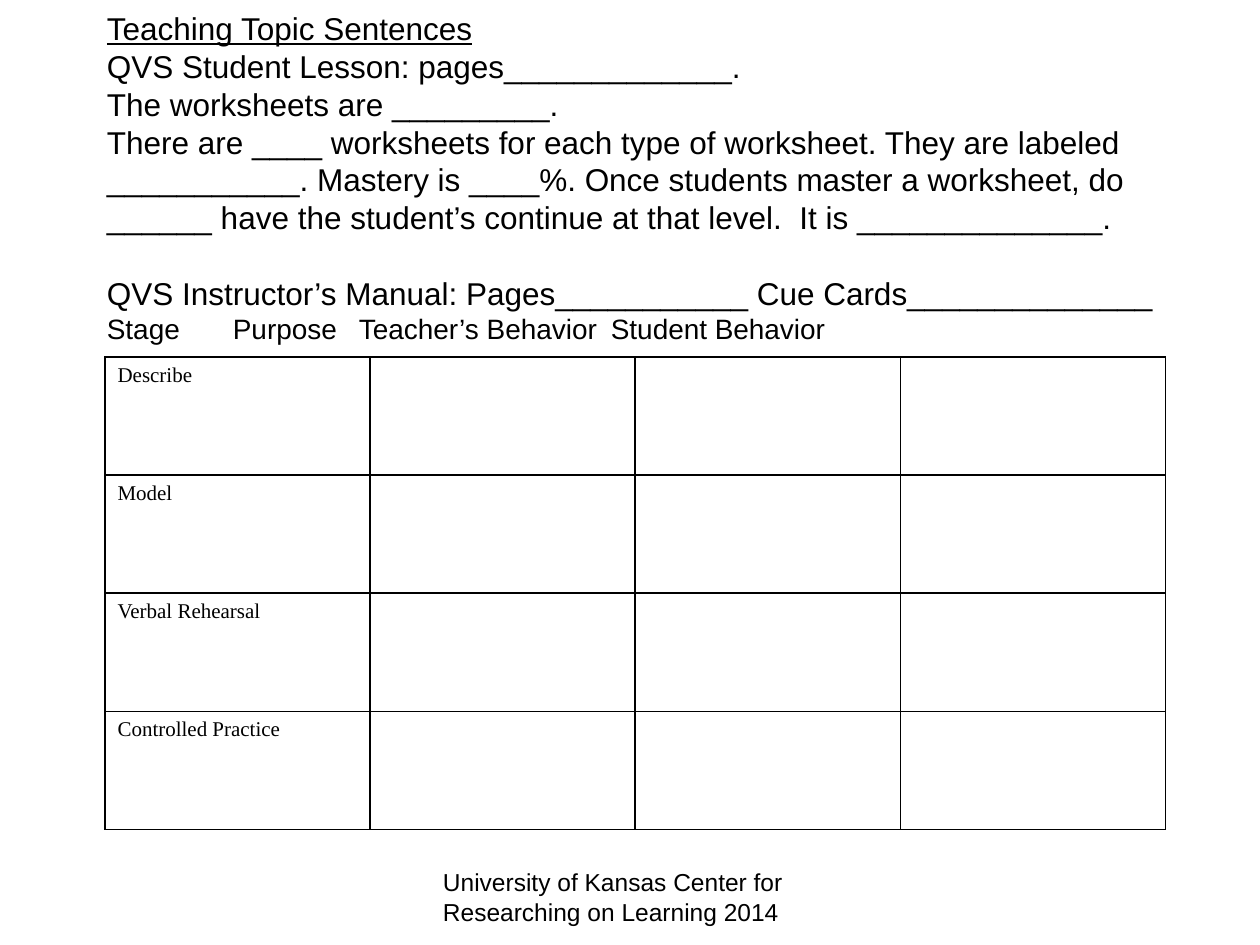
from dataclasses import dataclass

from lxml.etree import SubElement
from pptx import Presentation
from pptx.dml.color import RGBColor
from pptx.enum.text import MSO_ANCHOR as Anchor
from pptx.oxml.ns import qn
from pptx.util import Pt


@dataclass(frozen=True)
class Theme:
    """Colours, fonts and type sizes of the slide."""
    ink: RGBColor = RGBColor(0, 0, 0)
    sans: str = "Arial"
    serif: str = "Times New Roman"
    body: float = 18
    heading: float = 16
    footer: float = 14
    label: float = 12
    leading: float = 1.2
    border: float = 1


THEME = Theme()
LESSON = [
    "QVS Student Lesson: pages_____________.",
    "The worksheets are _________.",
    "There are ____ worksheets for each type of worksheet. They are labeled",
    "___________. Mastery is ____%. Once students master a worksheet, do",
    "______ have the student’s continue at that level.  It is ______________.",
]
MANUAL = "QVS Instructor’s Manual: Pages___________ Cue Cards______________"
HEADINGS = ["Stage", "Purpose", "Teacher’s Behavior", "Student Behavior"]
HEADING_STOPS = [216, 332, 504]
STAGES = ["Describe", "Model", "Verbal Rehearsal", "Controlled Practice"]


def write(frame, text, *, size, font=THEME.sans, underline=False, left=0,
          indent=0, before=0, leading=None, stops=()):
    """Add one formatted paragraph to a text frame."""
    paragraph = frame.paragraphs[0]
    if paragraph.runs:
        paragraph = frame.add_paragraph()
    properties = paragraph._p.get_or_add_pPr()
    properties.set("marL", str(Pt(left)))
    properties.set("indent", str(Pt(indent)))
    if stops:
        tabs = SubElement(properties, qn("a:tabLst"))
        for stop in stops:
            SubElement(tabs, qn("a:tab"), pos=str(Pt(stop)), algn="l")
    if leading:
        paragraph.line_spacing = Pt(size * leading)
    if before:
        paragraph.space_before = Pt(before)
    run = paragraph.add_run()
    run.text = text
    run.font.name = font
    run.font.size = Pt(size)
    run.font.underline = underline
    run.font.color.rgb = THEME.ink


def add_frame(slide, box, anchor=Anchor.TOP):
    """Place a wrapping text box and return its frame."""
    frame = slide.shapes.add_textbox(*map(Pt, box)).text_frame
    frame.word_wrap = True
    frame.vertical_anchor = anchor
    return frame


def add_lesson(slide, box):
    """Place the lesson blanks and the headings of the stage grid."""
    frame = add_frame(slide, box, Anchor.MIDDLE)
    line = dict(size=THEME.body, indent=36, leading=THEME.leading)
    write(frame, "Teaching Topic Sentences", underline=True, **line)
    for text in LESSON:
        write(frame, text, **line)
    write(frame, MANUAL, before=THEME.body * THEME.leading, **line)
    write(frame, "\t".join(HEADINGS), stops=HEADING_STOPS,
          **{**line, "size": THEME.heading})


def outline(cell):
    """Draw the four borders of a cell and clear its fill."""
    properties = cell._tc.get_or_add_tcPr()
    for side in ("lnL", "lnR", "lnT", "lnB"):
        edge = SubElement(properties, qn(f"a:{side}"), w=str(Pt(THEME.border)))
        fill = SubElement(edge, qn("a:solidFill"))
        SubElement(fill, qn("a:srgbClr"), val=str(THEME.ink))
    cell.fill.background()


def add_stages(slide, box):
    """Place the grid with one row for each stage."""
    grid = slide.shapes.add_table(len(STAGES), len(HEADINGS), *map(Pt, box)).table
    grid.first_row = grid.horz_banding = False
    for column in grid.columns:
        column.width = Pt(box[2] / len(HEADINGS))
    for row, stage in zip(grid.rows, STAGES):
        row.height = Pt(box[3] / len(STAGES))
        for cell in row.cells:
            outline(cell)
        write(row.cells[0].text_frame, stage, size=THEME.label,
              font=THEME.serif, left=27, indent=-27)


def add_footer(slide, box):
    """Place the source line at the foot of the slide."""
    write(add_frame(slide, box),
          "University of Kansas Center for Researching on Learning 2014",
          size=THEME.footer, leading=THEME.leading)


def main():
    """Build and save the slide."""
    deck = Presentation()
    deck.slide_width, deck.slide_height = Pt(720), Pt(540)
    slide = deck.slides.add_slide(deck.slide_layouts[6])
    add_stages(slide, (60, 204, 606, 270))
    add_lesson(slide, (18, 1.5, 652, 199.5))
    add_footer(slide, (246, 492, 228, 36))
    deck.save("out.pptx")


if __name__ == "__main__":
    main()
